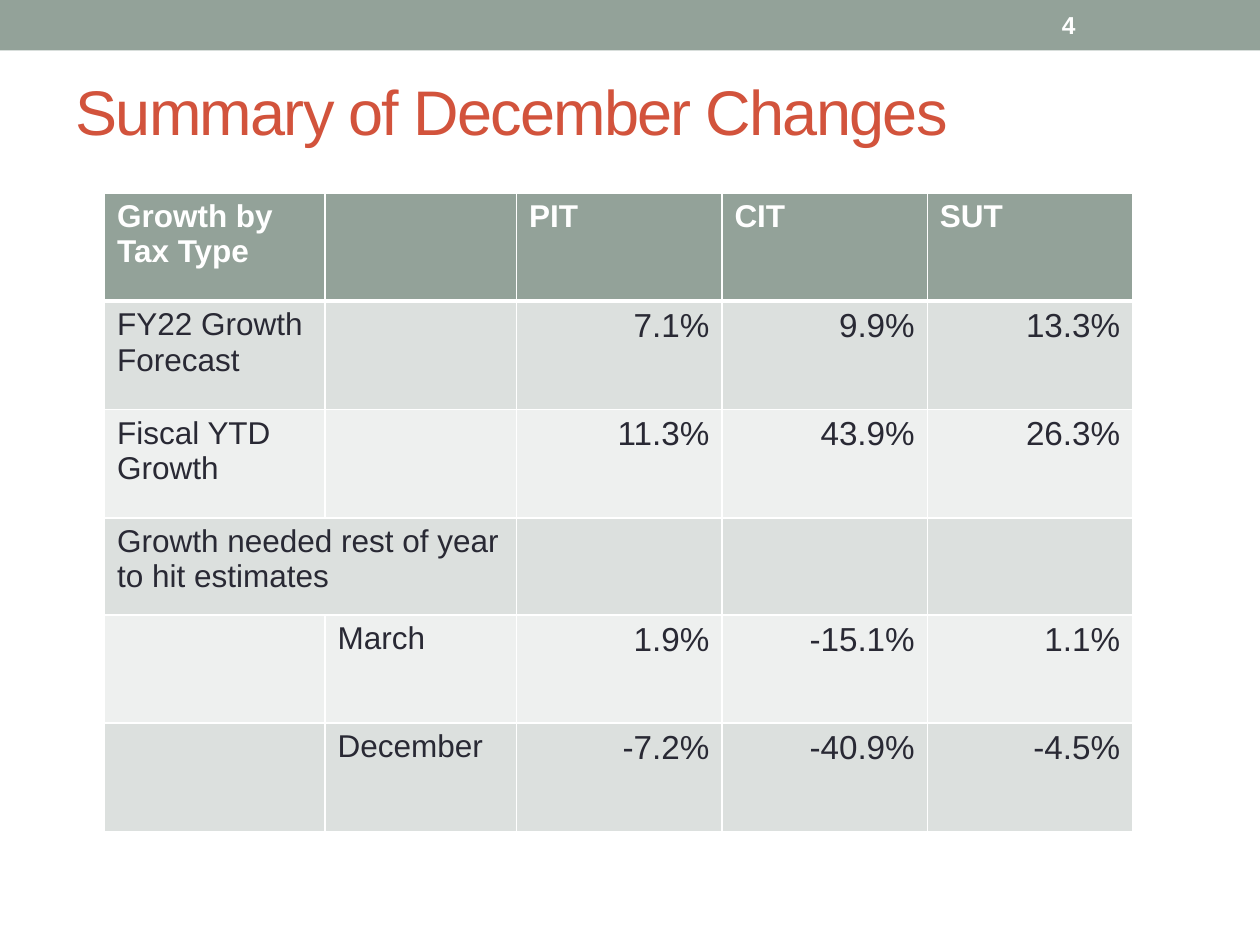
from dataclasses import dataclass

from lxml.etree import SubElement
from pptx import Presentation
from pptx.dml.color import RGBColor
from pptx.enum.shapes import MSO_SHAPE
from pptx.enum.text import MSO_ANCHOR, MSO_AUTO_SIZE, PP_ALIGN
from pptx.oxml.ns import qn
from pptx.util import Inches, Pt


@dataclass(frozen=True)
class Theme:
    font: str = "Arial"
    sage: str = "93A299"
    rust: str = "D2533C"
    ink: str = "292934"
    white: str = "FFFFFF"
    bands: tuple = ("DCE0DE", "EEF0EF")
    title_size: int = 36
    label_size: int = 18
    value_size: int = 19
    number_size: int = 14
    rule: int = 1
    header_rule: int = 3


class SlideBuilder:
    def __init__(self, slide, theme):
        self.slide = slide
        self.theme = theme

    def style(self, paragraph, size, color, bold=False, align=PP_ALIGN.LEFT):
        paragraph.alignment = align
        font = paragraph.font
        font.name, font.size, font.bold = self.theme.font, Pt(size), bold
        font.color.rgb = RGBColor.from_string(color)

    def band(self, left, top, width, height):
        band = self.slide.shapes.add_shape(
            MSO_SHAPE.RECTANGLE, Inches(left), Inches(top), Inches(width), Inches(height))
        band.shadow.inherit = False
        band.fill.solid()
        band.fill.fore_color.rgb = RGBColor.from_string(self.theme.sage)
        band.line.fill.background()

    def title(self, text, left, top, width, height):
        title = self.slide.shapes.title
        title.left, title.top = Inches(left), Inches(top)
        title.width, title.height = Inches(width), Inches(height)
        frame = title.text_frame
        frame.text = text
        frame.auto_size = MSO_AUTO_SIZE.NONE
        frame.vertical_anchor = MSO_ANCHOR.MIDDLE
        paragraph = frame.paragraphs[0]
        self.style(paragraph, self.theme.title_size, self.theme.rust)
        paragraph.runs[0].font._element.set("spc", "-100")

    def page_number(self, text, left, top, width, height):
        frame = self.slide.shapes.add_textbox(
            Inches(left), Inches(top), Inches(width), Inches(height)).text_frame
        frame.word_wrap = True
        frame.vertical_anchor = MSO_ANCHOR.MIDDLE
        frame.text = text
        self.style(frame.paragraphs[0], self.theme.number_size, self.theme.white, bold=True)

    def cell_borders(self, cell, top, bottom):
        properties = cell._tc.get_or_add_tcPr()
        rule = self.theme.rule
        for side, points in (("L", rule), ("R", rule), ("T", top), ("B", bottom)):
            line = SubElement(properties, qn(f"a:ln{side}"), w=str(Pt(points)))
            fill = SubElement(line, qn("a:solidFill"))
            SubElement(fill, qn("a:srgbClr"), val=self.theme.white)

    def table(self, rows, left, top, widths, heights, label_columns):
        """Draw a header row and banded rows; columns after the labels hold values."""
        theme = self.theme
        table = self.slide.shapes.add_table(
            len(rows), len(widths), Inches(left), Inches(top),
            Inches(sum(widths)), Inches(sum(heights))).table
        for column, width in zip(table.columns, widths):
            column.width = Inches(width)
        for r, (texts, height) in enumerate(zip(rows, heights)):
            table.rows[r].height = Inches(height)
            header = r == 0
            for c, text in enumerate(texts):
                cell = table.cell(r, c)
                self.cell_borders(
                    cell,
                    top=theme.header_rule if r == 1 else theme.rule,
                    bottom=theme.header_rule if header else theme.rule)
                cell.fill.solid()
                cell.fill.fore_color.rgb = RGBColor.from_string(
                    theme.sage if header else theme.bands[(r - 1) % 2])
                cell.text = text
                is_value = not header and c >= label_columns
                self.style(
                    cell.text_frame.paragraphs[0],
                    theme.value_size if is_value else theme.label_size,
                    theme.white if header else theme.ink,
                    bold=header,
                    align=PP_ALIGN.RIGHT if is_value else PP_ALIGN.LEFT)
        return table


def main():
    presentation = Presentation()
    presentation.slide_width, presentation.slide_height = Inches(10), Inches(7.5)
    title_only = presentation.slide_layouts[5]
    builder = SlideBuilder(presentation.slides.add_slide(title_only), Theme())

    builder.band(0, 0, 10, 0.4)
    builder.title("Summary of December Changes", 0.5, 0.5, 9.17, 0.75)
    builder.page_number("4", 8.33, 0.02, 1.17, 0.36)

    growth_rows = [
        ("Growth by Tax Type", "", "PIT", "CIT", "SUT"),
        ("FY22 Growth Forecast", "", "7.1%", "9.9%", "13.3%"),
        ("Fiscal YTD Growth", "", "11.3%", "43.9%", "26.3%"),
        ("Growth needed rest of year to hit estimates", "", "", "", ""),
        ("", "March", "1.9%", "-15.1%", "1.1%"),
        ("", "December", "-7.2%", "-40.9%", "-4.5%"),
    ]
    needed_row = 3
    heights = [0.77 if r == needed_row else 0.86 for r in range(len(growth_rows))]
    growth = builder.table(
        growth_rows, 0.83, 1.53, [1.75, 1.52] + [1.63] * 3, heights, label_columns=2)
    growth.cell(needed_row, 0).merge(growth.cell(needed_row, 1))

    presentation.save("out.pptx")


if __name__ == "__main__":
    main()
